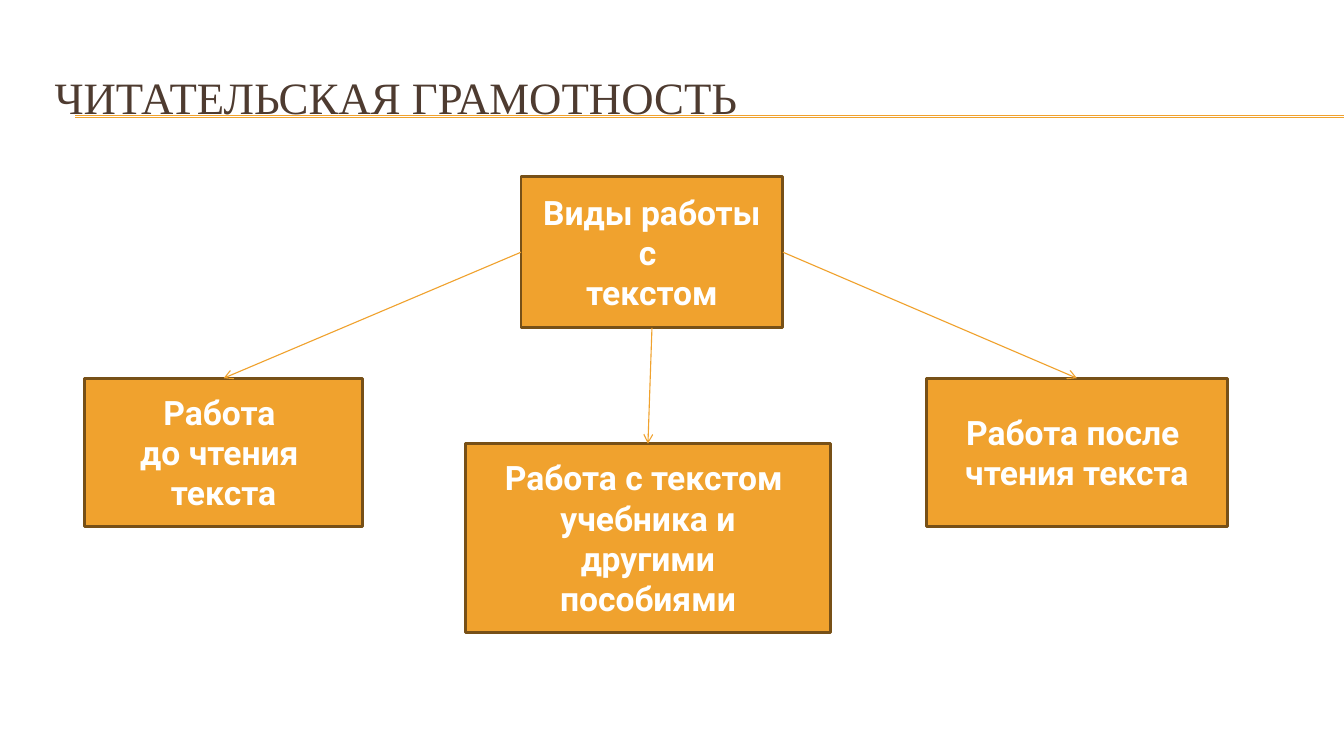
import lxml.etree
import pptx
import pptx.dml.color
import pptx.enum.shapes
import pptx.enum.text
import pptx.oxml.ns
import pptx.util
from pptx.util import Cm

AMBER, BROWN, DARK, WHITE = "F0A22E", "775017", "4E3B30", "FFFFFF"
TOP, LEFT, BOTTOM, RIGHT = range(4)  # connection sites of a rectangle


def rgb(color):
    return pptx.dml.color.RGBColor.from_string(color)


def add_line(start, end, width):
    """Add a straight amber line without a shadow."""
    line = slide.shapes.add_connector(
        pptx.enum.shapes.MSO_CONNECTOR.STRAIGHT, *start, *end)
    line.line.color.rgb = rgb(AMBER)
    line.line.width = pptx.util.Pt(width)
    lxml.etree.SubElement(line._element.spPr, pptx.oxml.ns.qn("a:effectLst"))
    return line


presentation = pptx.Presentation()
presentation.slide_width = Cm(33.87)
presentation.slide_height = Cm(19.05)
slide = presentation.slides.add_slide(presentation.slide_layouts[5])

# Double rule under the heading
for rule_top in (Cm(2.92), Cm(2.95)):
    add_line((Cm(1.9), rule_top), (presentation.slide_width, rule_top), 0.75)

# Heading, placed in front of the rule
heading = slide.shapes.title
slide.shapes._spTree.append(heading._element)
heading.left, heading.top = Cm(1.12), Cm(1.27)
heading.width, heading.height = Cm(32.18), Cm(2.34)
heading.text_frame.vertical_anchor = pptx.enum.text.MSO_ANCHOR.MIDDLE
heading_line = heading.text_frame.paragraphs[0]
heading_line.alignment = pptx.enum.text.PP_ALIGN.LEFT
heading_run = heading_line.add_run()
heading_run.text = "ЧИТАТЕЛЬСКАЯ ГРАМОТНОСТЬ"
heading_run.font.name = "Times New Roman"
heading_run.font.size = pptx.util.Pt(32)
heading_run.font.color.rgb = rgb(DARK)

# Boxes: left, top, width, height in cm, then the lines of text
stages = {
    "kinds": (13.13, 4.45, 6.6, 3.81, ["Виды работы с ", "текстом"]),
    "after": (23.34, 9.53, 7.6, 3.73, ["Работа после ", "чтения текста"]),
    "during": (11.73, 11.18, 9.2, 4.75,
               ["Работа с текстом ", "учебника и", "другими", "пособиями"]),
    "before": (2.13, 9.53, 7.01, 3.73, ["Работа ", "до чтения ", "текста"]),
}
boxes = {}
for stage, (left, top, width, height, lines) in stages.items():
    box = slide.shapes.add_shape(
        pptx.enum.shapes.MSO_SHAPE.RECTANGLE,
        Cm(left), Cm(top), Cm(width), Cm(height))
    box.shadow.inherit = False
    box.fill.solid()
    box.fill.fore_color.rgb = rgb(AMBER)
    box.line.color.rgb = rgb(BROWN)
    box.line.width = pptx.util.Pt(2)
    frame = box.text_frame
    frame.word_wrap = True
    frame.vertical_anchor = pptx.enum.text.MSO_ANCHOR.MIDDLE
    for index, text in enumerate(lines):
        paragraph = frame.add_paragraph() if index else frame.paragraphs[0]
        paragraph.alignment = pptx.enum.text.PP_ALIGN.CENTER
        run = paragraph.add_run()
        run.text = text
        run.font.name = "Roboto"
        run.font.size = pptx.util.Pt(24)
        run.font.bold = True
        run.font.color.rgb = rgb(WHITE)
    boxes[stage] = box

# Arrows from the kinds of work to each stage
for stage, site in (("after", RIGHT), ("before", LEFT), ("during", BOTTOM)):
    arrow = add_line((0, 0), (0, 0), 0.79)
    arrow.begin_connect(boxes["kinds"], site)
    arrow.end_connect(boxes[stage], TOP)
    outline = arrow._element.spPr.find(pptx.oxml.ns.qn("a:ln"))
    lxml.etree.SubElement(outline, pptx.oxml.ns.qn("a:tailEnd"), type="arrow")

presentation.save("out.pptx")
